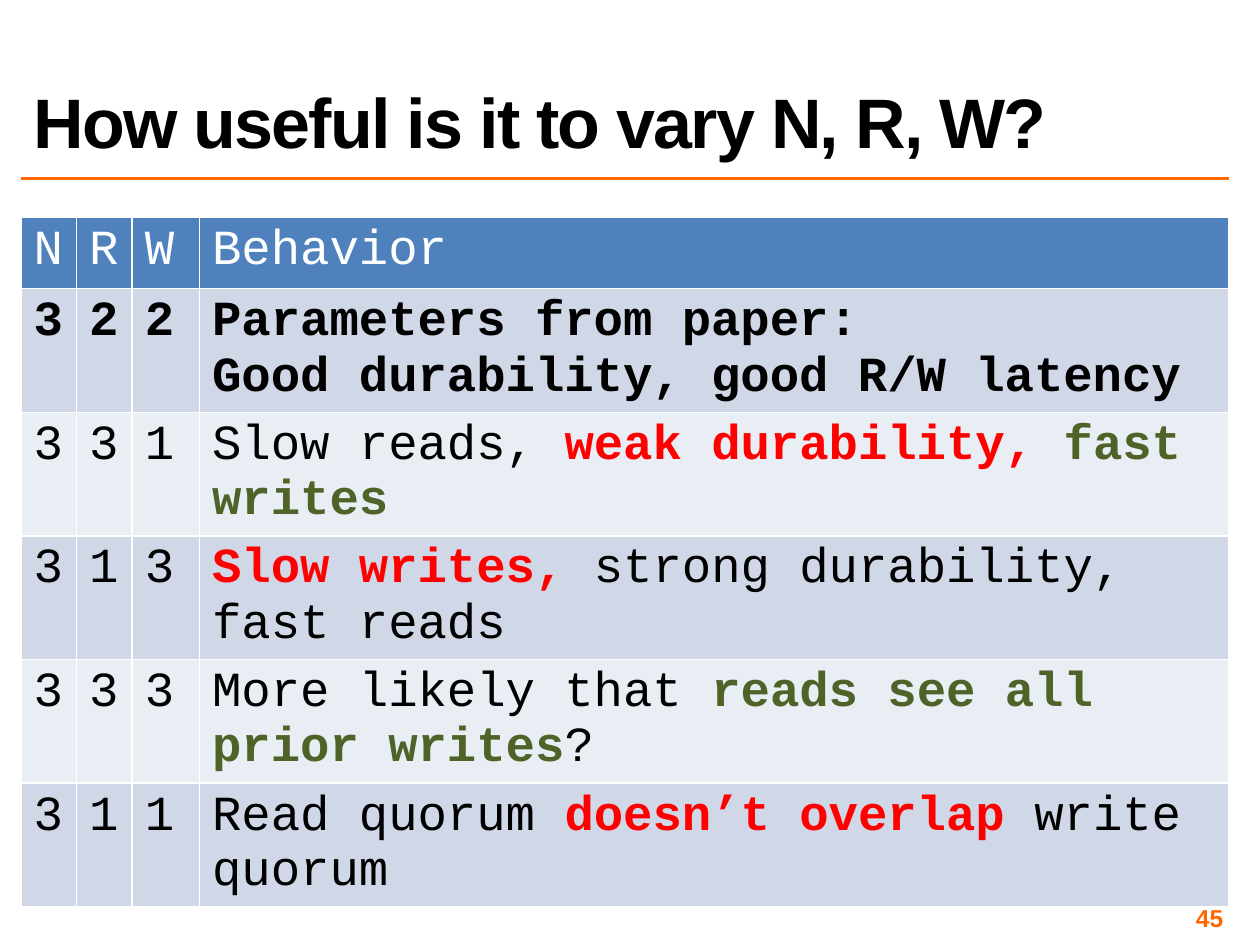
from pptx import Presentation
from pptx.dml.color import RGBColor
from pptx.enum.shapes import MSO_CONNECTOR
from pptx.enum.text import MSO_ANCHOR, MSO_AUTO_SIZE, PP_ALIGN
from pptx.oxml.ns import qn
from pptx.util import Pt
from lxml import etree

LEFT, RIGHT = PP_ALIGN.LEFT, PP_ALIGN.RIGHT
BLACK, WHITE, ORANGE, RED, GREEN = "000000", "FFFFFF", "FF6600", "FF0000", "4F6228"
HEADER_FILL, BAND_FILLS = "4F81BD", ("D0D8E8", "E9EDF4")
SANS, MONO = "Arial", "Courier New"

TITLE = "How useful is it to vary N, R, W?"
PAGE = "45"
HEADERS = ["N", "R", "W", "Behavior"]
# N, R, W, then the behavior as paragraphs of (text, color, bold) runs
ROWS = [
    ("3", "2", "2", [[("Parameters from paper:", BLACK, True)],
                     [("Good durability, good R/W latency", BLACK, True)]]),
    ("3", "3", "1", [[("Slow reads, ", BLACK, False), ("weak durability, ", RED, True),
                      ("fast writes", GREEN, True)]]),
    ("3", "1", "3", [[("Slow writes, ", RED, True),
                      ("strong durability, fast reads", BLACK, False)]]),
    ("3", "3", "3", [[("More likely that ", BLACK, False),
                      ("reads see all prior writes", GREEN, True), ("?", BLACK, False)]]),
    ("3", "1", "1", [[("Read quorum ", BLACK, False), ("doesn’t overlap ", RED, True),
                      ("write quorum", BLACK, False)]]),
]

MARGIN, CONTENT_WIDTH = 12, 690
NUMBER_WIDTHS = [31.8, 31.8, 38.5]
COLUMN_WIDTHS = NUMBER_WIDTHS + [CONTENT_WIDTH - sum(NUMBER_WIDTHS)]
ROW_HEIGHT = 41


def rgb(color):
    return RGBColor.from_string(color)


def add_run(paragraph, text, *, size=28, font=MONO, color=BLACK, bold=False,
            align=LEFT, tracking=None):
    paragraph.alignment = align
    run = paragraph.add_run()
    run.text = text
    run.font.size = Pt(size)
    run.font.name = font
    run.font.bold = bold
    run.font.color.rgb = rgb(color)
    if tracking is not None:
        run.font._element.set("spc", str(round(tracking * 100)))


def fill_cell(cell, paragraphs, fill):
    cell.fill.solid()
    cell.fill.fore_color.rgb = rgb(fill)
    for i, runs in enumerate(paragraphs):
        paragraph = cell.text_frame.add_paragraph() if i else cell.text_frame.paragraphs[0]
        for text, color, bold in runs:
            add_run(paragraph, text, color=color, bold=bold)


deck = Presentation()
deck.slide_width, deck.slide_height = Pt(720), Pt(540)
slide = deck.slides.add_slide(deck.slide_layouts[5])

title = slide.shapes.title
title.left, title.top = Pt(MARGIN), Pt(12)
title.width, title.height = Pt(CONTENT_WIDTH), Pt(84)
title.text_frame.vertical_anchor = MSO_ANCHOR.BOTTOM
title.text_frame.auto_size = MSO_AUTO_SIZE.NONE
heading = title.text_frame.paragraphs[0]
heading.line_spacing = 0.8
add_run(heading, TITLE, size=40, font=SANS, bold=True, tracking=-1)

rule = slide.shapes.add_connector(MSO_CONNECTOR.STRAIGHT, Pt(MARGIN), Pt(102),
                                  Pt(MARGIN + CONTENT_WIDTH), Pt(102))
rule.line.color.rgb = rgb(ORANGE)
rule.line.width = Pt(2)
etree.SubElement(rule._element.spPr, qn("a:effectLst"))

# The default table style supplies the white cell borders.
table = slide.shapes.add_table(len(ROWS) + 1, len(HEADERS), Pt(MARGIN), Pt(124),
                               Pt(CONTENT_WIDTH), Pt(ROW_HEIGHT * (len(ROWS) + 1))).table
for column, width in zip(table.columns, COLUMN_WIDTHS):
    column.width = Pt(width)
for row in table.rows:
    row.height = Pt(ROW_HEIGHT)
for c, header in enumerate(HEADERS):
    fill_cell(table.cell(0, c), [[(header, WHITE, False)]], HEADER_FILL)
for r, (*numbers, behavior) in enumerate(ROWS):
    bold = r == 0
    cells = [[[(number, BLACK, bold)]] for number in numbers] + [behavior]
    for c, paragraphs in enumerate(cells):
        fill_cell(table.cell(r + 1, c), paragraphs, BAND_FILLS[r % 2])

page_frame = slide.shapes.add_textbox(Pt(534), Pt(516), Pt(168), Pt(17)).text_frame
page_frame.word_wrap = True
page_frame.vertical_anchor = MSO_ANCHOR.MIDDLE
page_frame.margin_left = page_frame.margin_right = Pt(3)
page_frame.margin_top = page_frame.margin_bottom = Pt(3)
add_run(page_frame.paragraphs[0], PAGE, size=14, font=SANS, color=ORANGE, bold=True, align=RIGHT)

deck.save("out.pptx")
